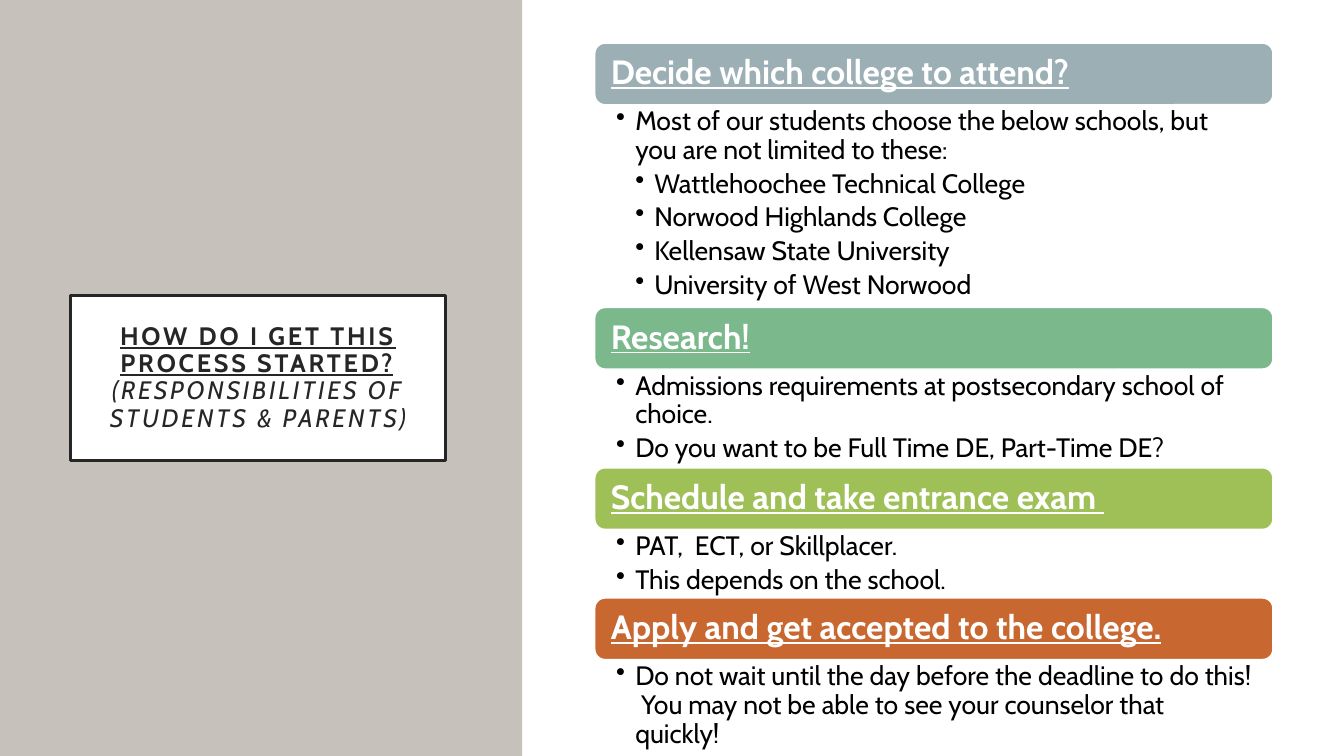
from lxml.etree import SubElement
from pptx import Presentation
from pptx.dml.color import RGBColor
from pptx.enum.shapes import MSO_SHAPE
from pptx.enum.text import MSO_ANCHOR, MSO_AUTO_SIZE, PP_ALIGN
from pptx.oxml.ns import qn
from pptx.util import Cm, Pt

FONT = "Cabin"
HEADER_H = 1.55
INDENT = 0.48

STEPS = [
    ("Decide which college to attend?", "9BAFB5", 5.11, [
        (1, "Most of our students choose the below schools, but you are not limited to these:"),
        (2, "Wattlehoochee Technical College"),
        (2, "Norwood Highlands College"),
        (2, "Kellensaw State University"),
        (2, "University of West Norwood"),
    ]),
    ("Research!", "7BB88C", 2.49, [
        (1, "Admissions requirements at postsecondary school of choice."),
        (1, "Do you want to be Full Time DE, Part-Time DE?"),
    ]),
    ("Schedule and take entrance exam ", "9FC057", 1.73, [
        (1, "PAT,  ECT, or Skillplacer."),
        (1, "This depends on the school."),
    ]),
    ("Apply and get accepted to the college.", "C96731", 1.57, [
        (1, "Do not wait until the day before the deadline to do this!  "
            "You may not be able to see your counselor that quickly!"),
    ]),
]


def rgb(value):
    """Turn a hex string into a colour."""
    return RGBColor.from_string(value)


def style_run(r, size, color, bold=False, underline=False, italic=False):
    """Format one run."""
    f = r.font
    f.name, f.size = FONT, Pt(size)
    f.bold, f.underline, f.italic = bold, underline, italic
    f.color.rgb = rgb(color)


def set_frame(tf, left, top, right, bottom, anchor):
    """Set the wrapping, insets and anchor of a text frame."""
    tf.word_wrap = True
    tf.auto_size = MSO_AUTO_SIZE.NONE
    tf.margin_left, tf.margin_top = Cm(left), Cm(top)
    tf.margin_right, tf.margin_bottom = Cm(right), Cm(bottom)
    tf.vertical_anchor = anchor


def add_box(s, kind, x, y, w, h, fill):
    """Add a flat filled shape without an outline."""
    sp = s.shapes.add_shape(kind, Cm(x), Cm(y), Cm(w), Cm(h))
    sp.shadow.inherit = False
    sp.fill.solid()
    sp.fill.fore_color.rgb = rgb(fill)
    sp.line.fill.background()
    return sp


def add_title_panel(s, x, y, w, h):
    """Place the grey side panel and the framed title on it."""
    panel = add_box(s, MSO_SHAPE.RECTANGLE, x, y, w, h, "C6C1BA")
    title = s.shapes.title
    title._element.addprevious(panel._element)
    title.left, title.top = Cm(x + 1.78), Cm(y + 7.44)
    title.width, title.height = Cm(9.45), Cm(4.17)
    title.fill.solid()
    title.fill.fore_color.rgb = rgb("FFFFFF")
    title.line.color.rgb = rgb("262626")
    title.line.width = Pt(2.5)
    tf = title.text_frame
    set_frame(tf, 0.51, 0.51, 0.51, 0.51, MSO_ANCHOR.MIDDLE)
    tf.text = "HOW DO I GET THIS PROCESS STARTED?\v(RESPONSIBILITIES OF STUDENTS & PARENTS)"
    p = tf.paragraphs[0]
    p.alignment = PP_ALIGN.CENTER
    p.line_spacing = 0.9
    question, note = p.runs
    style_run(question, 18, "262626", bold=True, underline=True)
    style_run(note, 18, "262626", italic=True)
    for r in p.runs:
        r._r.get_or_add_rPr().set("spc", "200")


def add_header(s, x, y, w, text, color):
    """Add the rounded heading bar of a step."""
    sp = add_box(s, MSO_SHAPE.ROUNDED_RECTANGLE, x, y, w, HEADER_H, color)
    sp.line.color.rgb = rgb("FFFFFF")
    sp.line.width = Pt(1)
    tf = sp.text_frame
    set_frame(tf, 0.33, 0.25, 0.33, 0.25, MSO_ANCHOR.MIDDLE)
    tf.text = text
    p = tf.paragraphs[0]
    p.alignment = PP_ALIGN.LEFT
    p.line_spacing = 0.9
    style_run(p.runs[0], 24, "FFFFFF", bold=True, underline=True)


def add_bullets(s, x, y, w, h, items):
    """Add the bulleted text below a heading bar."""
    tf = s.shapes.add_textbox(Cm(x), Cm(y), Cm(w), Cm(h)).text_frame
    set_frame(tf, 0.54, 0.08, 0.48, 0.08, MSO_ANCHOR.TOP)
    tf.text = "\n".join(text for _, text in items)
    for p, (level, _) in zip(tf.paragraphs, items):
        p.level = level
        p.alignment = PP_ALIGN.LEFT
        p.line_spacing = 0.9
        p.space_before, p.space_after = Pt(0), Pt(3.5)
        pPr = p._p.get_or_add_pPr()
        pPr.set("marL", str(Cm(INDENT * level)))
        pPr.set("indent", str(Cm(-INDENT)))
        SubElement(pPr, qn("a:buChar")).set("char", "•")
        style_run(p.runs[0], 19, "000000")


def add_steps(s, x, y, w, h):
    """Stack the steps from top to bottom on a white panel."""
    add_box(s, MSO_SHAPE.RECTANGLE, x, y, w, h, "FFFFFF")
    left, top, width = x + 1.78, y + 1.09, 17.09
    for heading, color, body_h, items in STEPS:
        add_header(s, left, top, width, heading, color)
        add_bullets(s, left, top + HEADER_H, width, body_h, items)
        top += HEADER_H + body_h


def main():
    """Build the slide and save it."""
    prs = Presentation()
    prs.slide_width, prs.slide_height = Cm(33.87), Cm(19.05)
    s = prs.slides.add_slide(prs.slide_layouts[5])
    add_title_panel(s, 0, 0, 13.16, 19.05)
    add_steps(s, 13.21, 0, 20.66, 19.05)
    prs.save("out.pptx")


if __name__ == "__main__":
    main()
